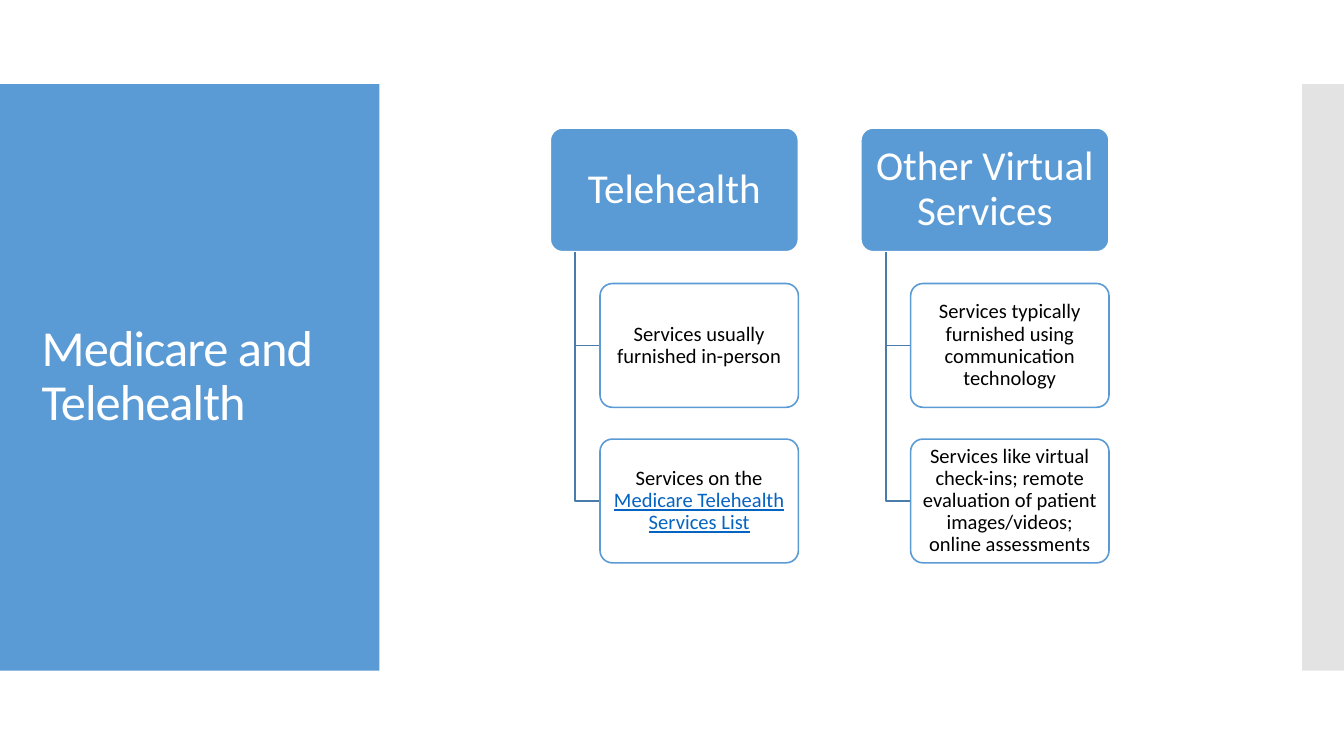
"""Build the Medicare and Telehealth slide with two columns of service cards."""
from lxml.etree import SubElement
from pptx import Presentation
from pptx.dml.color import RGBColor
from pptx.enum.shapes import MSO_SHAPE
from pptx.enum.text import MSO_ANCHOR, PP_ALIGN
from pptx.oxml.ns import qn
from pptx.util import Cm, Pt

COLORS = {
    "blue": "5B9BD5",
    "gray": "C8C8C8",
    "branch": "497CAB",
    "white": "FFFFFF",
    "black": "000000",
    "link": "0563C1",
}
COLUMNS = [
    ("Telehealth", [
        [("Services usually furnished in-person", "black")],
        [("Services on the ", "black"), ("Medicare Telehealth Services List", "link")],
    ]),
    ("Other Virtual Services", [
        [("Services typically furnished using communication technology", "black")],
        [("Services like virtual check-ins; remote evaluation of patient "
          "images/videos; online assessments", "black")],
    ]),
]
HEADER_TOP, CARD_HEIGHT, ROW_STEP = 2.42, 2.34, 2.94
COLUMN_LEFT, COLUMN_STEP, HEADER_WIDTH = 10.4, 5.87, 4.69
TRUNK_INDENT, DETAIL_INDENT = 0.47, 0.94

deck = Presentation()
deck.slide_width, deck.slide_height = Cm(25.4), Cm(14.29)
page = deck.slides.add_slide(deck.slide_layouts[6])


def add_box(kind, left, top, width, height, fill, line=None, opacity=100):
    box = page.shapes.add_shape(kind, Cm(left), Cm(top), Cm(width), Cm(height))
    box.shadow.inherit = False
    box.fill.solid()
    box.fill.fore_color.rgb = RGBColor.from_string(COLORS[fill])
    if opacity < 100:
        color = box.fill._xPr.find(qn("a:solidFill"))[0]
        SubElement(color, qn("a:alpha")).set("val", str(opacity * 1000))
    if line:
        box.line.color.rgb = RGBColor.from_string(COLORS[line])
        box.line.width = Pt(0.85)
        box.adjustments[0] = 0.1
    else:
        box.line.fill.background()
    return box


def write_text(box, spans, size, align, side=0.25, edge=0.13):
    frame = box.text_frame
    frame.word_wrap = True
    frame.vertical_anchor = MSO_ANCHOR.MIDDLE
    frame.margin_left = frame.margin_right = Cm(side)
    frame.margin_top = frame.margin_bottom = Cm(edge)
    para = frame.paragraphs[0]
    para.alignment = align
    para.line_spacing = 0.9
    para.font.name = "Calibri"
    para.font.size = Pt(size)
    for text, color in spans:
        span = para.add_run()
        span.text = text
        span.font.color.rgb = RGBColor.from_string(COLORS[color])
        if color == "link":
            span.font.underline = True
    return para


add_box(MSO_SHAPE.RECTANGLE, 0, 1.59, 7.17, 11.09, "blue")
add_box(MSO_SHAPE.RECTANGLE, 24.61, 1.59, 0.79, 11.09, "gray", opacity=50)

title = page.shapes.add_textbox(Cm(0.54), Cm(2.34), Cm(6.15), Cm(9.58))
title_para = write_text(title, [("Medicare and Telehealth", "white")], 27, PP_ALIGN.LEFT)
title_para.runs[0].font._element.set("spc", "-50")

for column, (heading, details) in enumerate(COLUMNS):
    left = COLUMN_LEFT + column * COLUMN_STEP
    header = add_box(MSO_SHAPE.ROUNDED_RECTANGLE, left, HEADER_TOP,
                     HEADER_WIDTH, CARD_HEIGHT, "blue", "white")
    write_text(header, [(heading, "white")], 22, PP_ALIGN.CENTER, 0.2, 0.15)

    for row, spans in enumerate(details, start=1):
        top = HEADER_TOP + row * ROW_STEP
        trunk, detail_left = left + TRUNK_INDENT, left + DETAIL_INDENT
        middle = top + CARD_HEIGHT / 2
        builder = page.shapes.build_freeform(Cm(trunk), Cm(HEADER_TOP + CARD_HEIGHT))
        builder.add_line_segments(
            [(Cm(trunk), Cm(middle)), (Cm(detail_left), Cm(middle))], close=False)
        branch = builder.convert_to_shape()
        branch.shadow.inherit = False
        branch.fill.background()
        branch.line.color.rgb = RGBColor.from_string(COLORS["branch"])
        branch.line.width = Pt(0.85)

        card = add_box(MSO_SHAPE.ROUNDED_RECTANGLE, detail_left, top,
                       HEADER_WIDTH - DETAIL_INDENT, CARD_HEIGHT, "white", "blue", 90)
        write_text(card, spans, 11, PP_ALIGN.CENTER, 0.12, 0.12)

deck.save("out.pptx")
